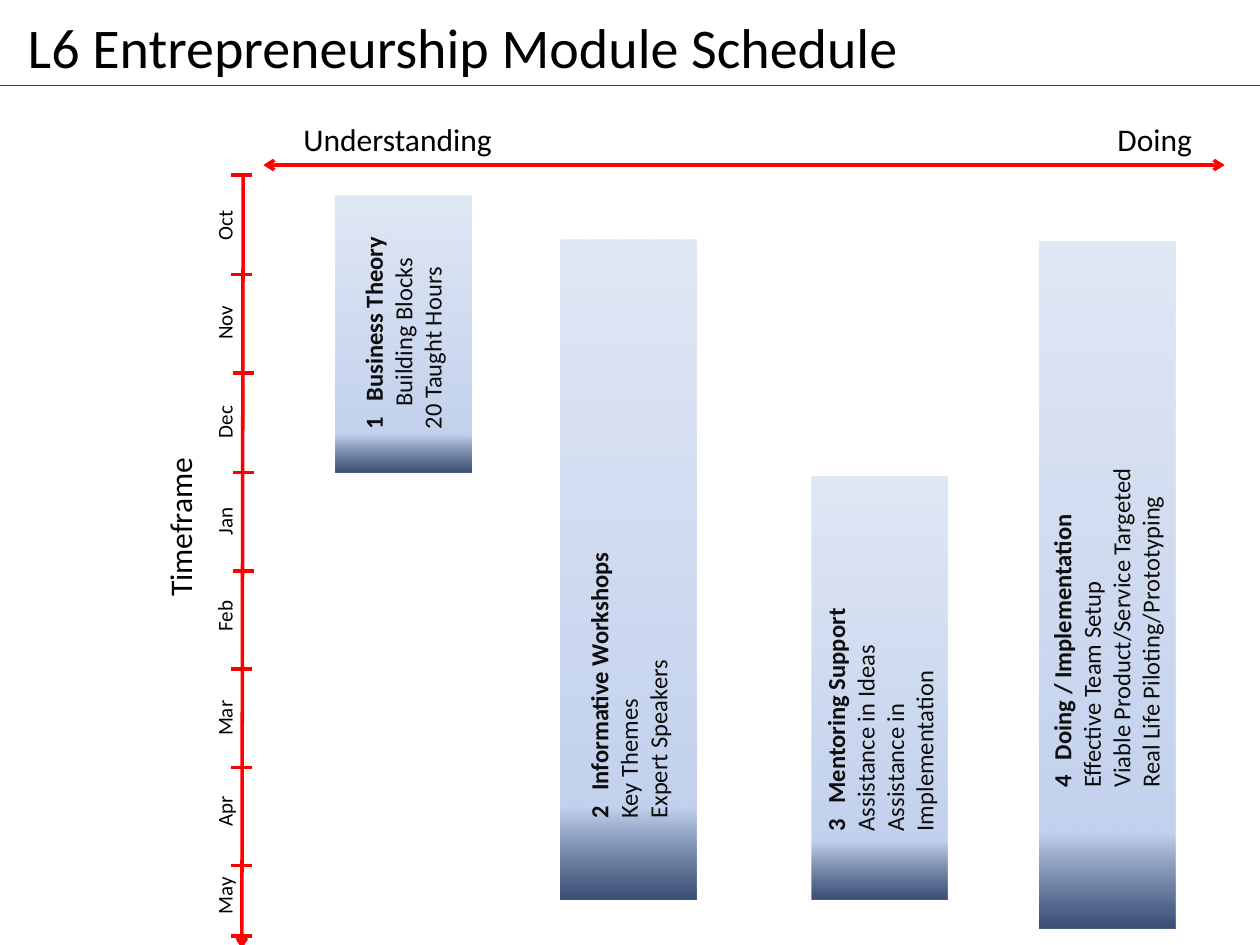
import pptx
import pptx.util
import pptx.dml.color
import pptx.enum.shapes
import pptx.enum.text
import pptx.oxml
import pptx.oxml.ns

RGBColor = pptx.dml.color.RGBColor
Align = pptx.enum.text.PP_ALIGN
Anchor = pptx.enum.text.MSO_ANCHOR

BLACK = RGBColor(0x00, 0x00, 0x00)
NEAR_BLACK = RGBColor(0x0D, 0x0D, 0x0D)
RED = RGBColor(0xFF, 0x00, 0x00)
DARK_RED = RGBColor(0xC0, 0x00, 0x00)
NAVY = RGBColor(0x19, 0x32, 0x5E)
MID_BLUE = RGBColor(0xC2, 0xD1, 0xED)
PALE_BLUE = RGBColor(0xE1, 0xE8, 0xF5)

BAR_STOPS = [(0, NAVY, 86), (14, MID_BLUE, 100), (100, PALE_BLUE, 100)]
BAR_WIDTH = 108
NUMBER_TAB = 22

MONTHS = [("Oct", 179), ("Nov", 256), ("Dec", 335), ("Jan", 414),
          ("Feb", 489), ("Mar", 570), ("Apr", 644), ("May", 711)]
TICKS = [(183, 139), (183, 218), (185, 296), (185, 375), (185, 453),
         (183, 531), (183, 609), (183, 687), (183, 743)]

MODULES = [
    {"bar": (266, 155, 220), "label": (228, 218, 184, 81),
     "heading": "1\tBusiness Theory",
     "details": [("Building Blocks", 18), ("20 Taught Hours", 0)]},
    {"bar": (445, 190, 524), "label": (378, 498, 242, 81),
     "heading": "2\tInformative Workshops",
     "details": [("Key Themes", 0), ("Expert Speakers", 0)]},
    {"bar": (644, 378, 336), "label": (577, 496, 243, 104),
     "heading": "3\tMentoring Support",
     "details": [("Assistance in Ideas", 0), ("Assistance in Implementation", 0)]},
    {"bar": (825, 192, 545), "label": (689, 394, 378, 104),
     "heading": "4\tDoing / Implementation",
     "details": [("Effective Team Setup", 0), ("Viable Product/Service Targeted", 0),
                 ("Real Life Piloting/Prototyping", 0)]},
]


def px(length):
    return pptx.util.Emu(length * 9144)


def apply(target, values):
    for name, value in values.items():
        setattr(target, name, value)


def xml(tag, parent, **attributes):
    child = parent.makeelement(pptx.oxml.ns.qn(tag), attributes)
    parent.append(child)
    return child


class ScheduleSlide:
    """Holds the text style, the current slide and the group being filled."""

    font_name = "Calibri"

    def __init__(self, slide):
        self.slide = slide
        self.shapes = slide.shapes

    def open_group(self):
        self.shapes = self.slide.shapes.add_group_shape().shapes

    def close_group(self):
        self.shapes = self.slide.shapes

    def add_text(self, paragraph, text, size, color=BLACK, bold=False):
        run = paragraph.add_run()
        run.text = text
        apply(run.font, {"name": self.font_name, "size": pptx.util.Pt(size), "bold": bold})
        run.font.color.rgb = color

    def title(self, text, left, top, width, height):
        heading = self.slide.shapes.title
        apply(heading, {"left": px(left), "top": px(top),
                        "width": px(width), "height": px(height)})
        apply(heading.text_frame, {"vertical_anchor": Anchor.MIDDLE, "word_wrap": True,
                                   "auto_size": pptx.enum.text.MSO_AUTO_SIZE.NONE})
        paragraph = heading.text_frame.paragraphs[0]
        paragraph.alignment = Align.LEFT
        self.add_text(paragraph, text, 32)

    def box(self, left, top, width, height, rotation=0):
        box = self.shapes.add_textbox(px(left), px(top), px(width), px(height))
        box.rotation = rotation
        box.text_frame.word_wrap = True
        return box.text_frame

    def label(self, text, left, top, width, height, rotation=0):
        frame = self.box(left, top, width, height, rotation)
        self.add_text(frame.paragraphs[0], text, 18)

    def month(self, text, middle):
        width, height = 60, 30
        frame = self.box(178 - width // 2, middle - height // 2, width, height, 270)
        apply(frame, {"margin_left": 0, "margin_right": 0})
        frame.paragraphs[0].alignment = Align.CENTER
        self.add_text(frame.paragraphs[0], text, 12)

    def line(self, x1, y1, x2, y2, color=RED, weight=2, arrows=()):
        line = self.shapes.add_connector(pptx.enum.shapes.MSO_CONNECTOR.STRAIGHT,
                                         px(x1), px(y1), px(x2), px(y2))
        line.line.color.rgb = color
        line.line.width = pptx.util.Pt(weight)
        for end in arrows:
            xml(end, line.line._get_or_add_ln(), type="arrow")
        xml("a:effectLst", line._element.spPr)

    def bar(self, left, top, height):
        bar = self.shapes.add_shape(pptx.enum.shapes.MSO_SHAPE.RECTANGLE,
                                    px(left), px(top), px(BAR_WIDTH), px(height))
        bar.shadow.inherit = False
        bar.line.fill.background()
        bar.fill.gradient()
        gradient = bar._element.spPr.find(pptx.oxml.ns.qn("a:gradFill"))
        for child in list(gradient):
            gradient.remove(child)
        stops = xml("a:gsLst", gradient)
        for position, color, opacity in BAR_STOPS:
            stop = xml("a:gs", stops, pos=str(position * 1000))
            shade = xml("a:srgbClr", stop, val=str(color))
            if opacity < 100:
                xml("a:alpha", shade, val=str(opacity * 1000))
        xml("a:lin", gradient, ang=str(270 * 60000), scaled="0")

    def module_label(self, place, heading, details):
        frame = self.box(*place, rotation=270)
        first = frame.paragraphs[0]
        tabs = xml("a:tabLst", first._p.get_or_add_pPr())
        xml("a:tab", tabs, pos=str(px(NUMBER_TAB)), algn="l")
        self.add_text(first, heading, 14, NEAR_BLACK, bold=True)
        for text, indent in details:
            paragraph = frame.add_paragraph()
            paragraph._p.get_or_add_pPr().set("marL", str(px(indent)))
            self.add_text(paragraph, text, 14, NEAR_BLACK)


def main():
    presentation = pptx.Presentation()
    apply(presentation, {"slide_width": px(1000), "slide_height": px(750)})
    schedule = ScheduleSlide(presentation.slides.add_slide(presentation.slide_layouts[5]))
    schedule.title("L6 Entrepreneurship Module Schedule", 12, -3, 872, 79)

    schedule.open_group()
    schedule.line(209, 131, 972, 131, arrows=("a:headEnd", "a:tailEnd"))
    schedule.label("Understanding", 231, 90, 175, 40)
    schedule.label("Doing", 877, 90, 88, 40)
    schedule.close_group()

    for module in MODULES:
        schedule.bar(*module["bar"])
    for module in MODULES:
        schedule.module_label(module["label"], module["heading"], module["details"])

    schedule.open_group()
    schedule.label("Timeframe", 55, 376, 175, 40, rotation=270)
    schedule.line(193, 139, 192, 753, arrows=("a:tailEnd",))
    for left, level in TICKS:
        schedule.line(left, level, left + 17, level)
    for name, middle in MONTHS:
        schedule.month(name, middle)
    schedule.close_group()

    schedule.line(0, 68, 1000, 68, color=DARK_RED, weight=0.75)
    presentation.save("out.pptx")


if __name__ == "__main__":
    main()
